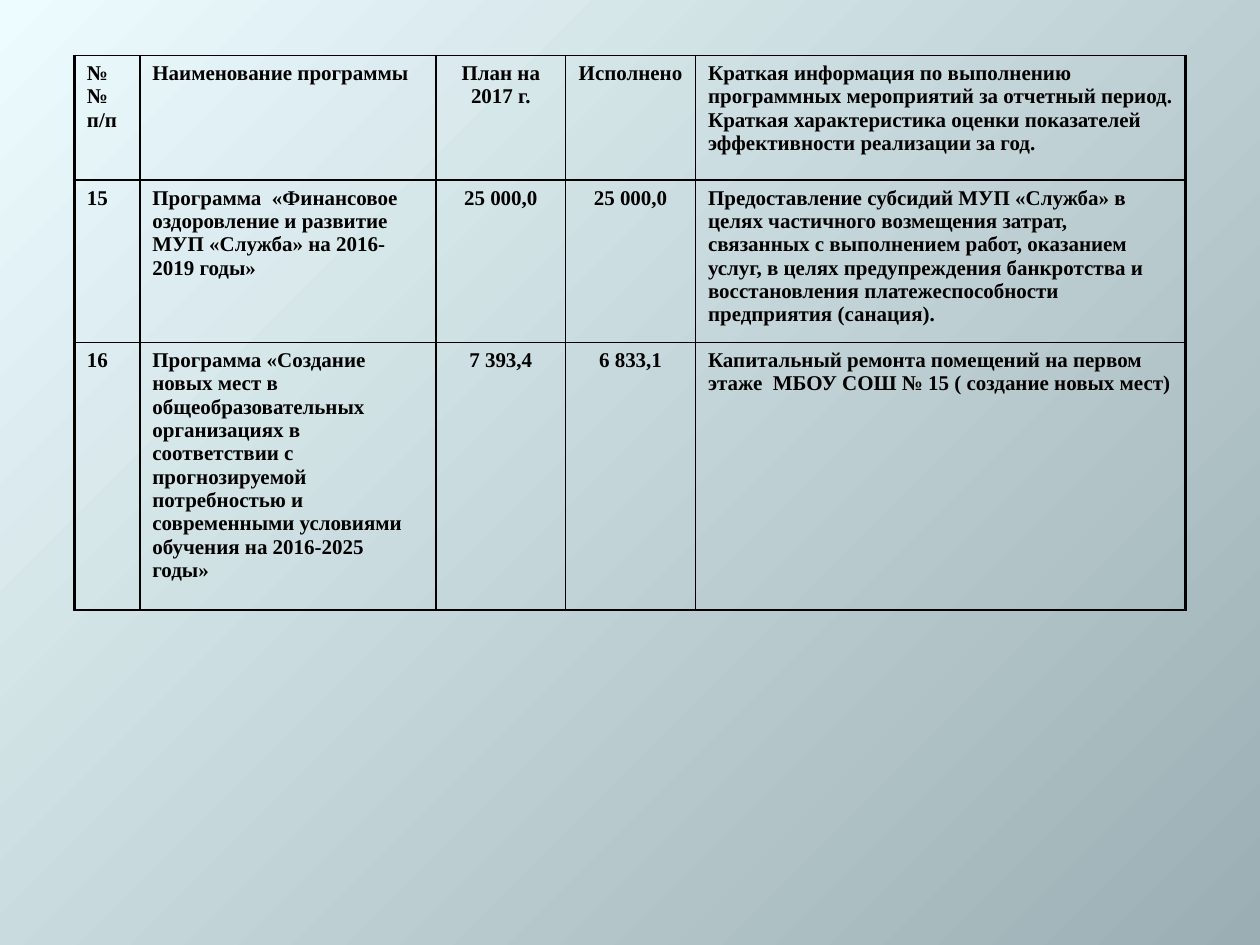
from dataclasses import dataclass

from lxml.etree import SubElement
from pptx import Presentation
from pptx.dml.color import RGBColor
from pptx.enum.text import PP_ALIGN
from pptx.oxml.ns import qn
from pptx.util import Inches, Pt


@dataclass(frozen=True)
class Theme:
    """Colours, type and line widths of the slide."""
    light: str = "EDFCFF"
    dark: str = "9BAEB3"
    ink: str = "000000"
    font: str = "Times New Roman"
    size: float = 12
    thin: float = 1
    thick: float = 2.25


@dataclass(frozen=True)
class Column:
    """Width and alignment of one table column."""
    width: float
    align: PP_ALIGN = PP_ALIGN.LEFT


@dataclass(frozen=True)
class Row:
    """Height and cell texts of one table row."""
    height: float
    texts: tuple[str, ...]


THEME = Theme()
COLUMNS = (
    Column(0.52),
    Column(2.35),
    Column(1.03, PP_ALIGN.CENTER),
    Column(1.03, PP_ALIGN.CENTER),
    Column(3.89),
)
ROWS = (
    Row(0.99, (
        "№№ п/п",
        "Наименование программы",
        "План на 2017 г.",
        "Исполнено",
        "Краткая информация по выполнению программных мероприятий за отчетный "
        "период. Краткая характеристика оценки показателей эффективности "
        "реализации за год.",
    )),
    Row(1.29, (
        "15",
        "Программа  «Финансовое оздоровление и развитие МУП «Служба» на "
        "2016-2019 годы»",
        "25 000,0",
        "25 000,0",
        "Предоставление субсидий МУП «Служба» в целях частичного возмещения "
        "затрат, связанных с выполнением работ, оказанием услуг, в целях "
        "предупреждения банкротства и восстановления платежеспособности "
        "предприятия (санация).",
    )),
    Row(2.12, (
        "16",
        "Программа «Создание новых мест в общеобразовательных организациях в "
        "соответствии с прогнозируемой потребностью и современными условиями "
        "обучения на 2016-2025 годы»",
        "7 393,4",
        "6 833,1",
        "Капитальный ремонта помещений на первом этаже  МБОУ СОШ № 15 "
        "( создание новых мест)",
    )),
)


def paint_back(slide) -> None:
    """Fill the background with a diagonal gradient."""
    fill = slide.background.fill
    fill.gradient()
    fill.gradient_angle = 315
    for stop, colour in zip(fill.gradient_stops, (THEME.light, THEME.dark)):
        stop.color.rgb = RGBColor.from_string(colour)


def add_edge(cell, side: str, width: float) -> None:
    """Draw one border of a cell."""
    props = cell._tc.get_or_add_tcPr()
    line = SubElement(props, qn(f"a:ln{side}"), w=str(Pt(width)))
    fill = SubElement(line, qn("a:solidFill"))
    SubElement(fill, qn("a:srgbClr"), val=THEME.ink)


def fill_cell(cell, text: str, align: PP_ALIGN) -> None:
    """Write and format the text of a cell."""
    cell.fill.background()
    cell.text_frame.text = text
    line = cell.text_frame.paragraphs[0]
    line.alignment = align
    for run in line.runs:
        run.font.name = THEME.font
        run.font.size = Pt(THEME.size)
        run.font.bold = True
        run.font.color.rgb = RGBColor.from_string(THEME.ink)


def add_grid(slide, left: float, top: float) -> None:
    """Build the programme table."""
    width = sum(column.width for column in COLUMNS)
    height = sum(row.height for row in ROWS)
    table = slide.shapes.add_table(
        len(ROWS), len(COLUMNS),
        Inches(left), Inches(top), Inches(width), Inches(height),
    ).table
    table.first_row = table.horz_banding = False
    for index, column in enumerate(COLUMNS):
        table.columns[index].width = Inches(column.width)
    last = len(COLUMNS) - 1
    for down, row in enumerate(ROWS):
        table.rows[down].height = Inches(row.height)
        for across, (column, text) in enumerate(zip(COLUMNS, row.texts)):
            cell = table.cell(down, across)
            add_edge(cell, "L", THEME.thick if across == 0 else THEME.thin)
            add_edge(cell, "R", THEME.thick if across == last else THEME.thin)
            add_edge(cell, "T", THEME.thin)
            add_edge(cell, "B", THEME.thin)
            fill_cell(cell, text, column.align)


def main() -> None:
    """Create and save the slide."""
    deck = Presentation()
    deck.slide_width = Inches(10)
    deck.slide_height = Inches(7.5)
    slide = deck.slides.add_slide(deck.slide_layouts[6])
    paint_back(slide)
    add_grid(slide, 0.59, 0.44)
    deck.save("out.pptx")


if __name__ == "__main__":
    main()
